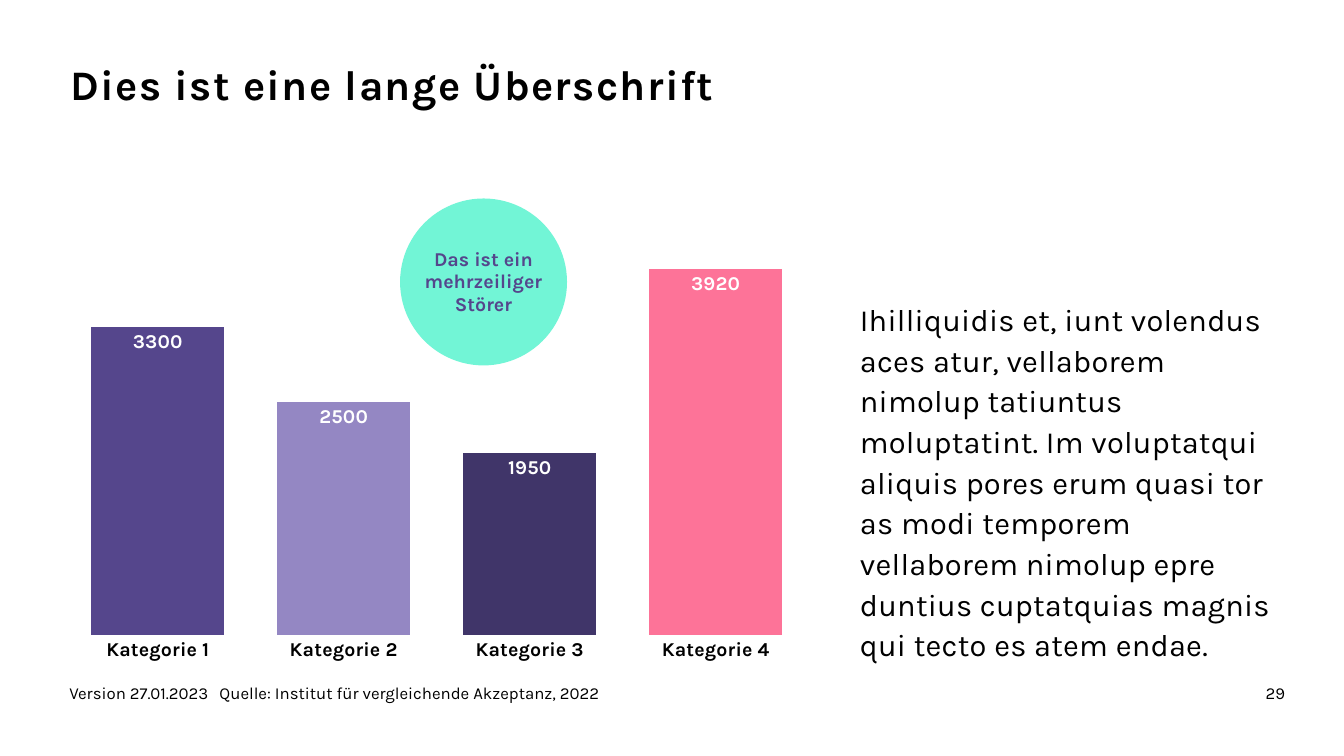
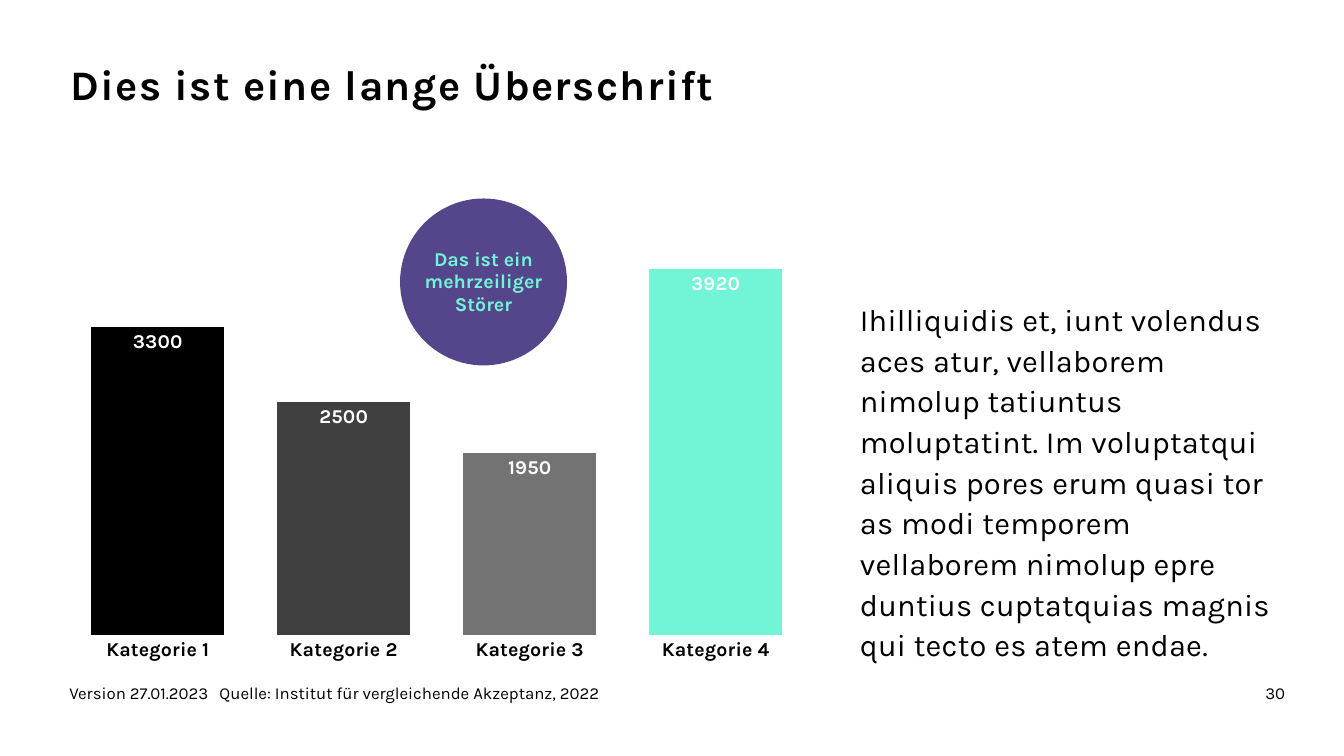
from dataclasses import dataclass

from lxml import etree
from pptx import Presentation
from pptx import util as u
from pptx.chart import data as cd
from pptx.dml import color
from pptx.enum import chart as ch, shapes, text
from pptx.oxml import ns

SCALE = 9525
FONT = "Karla"
BLACK, WHITE = "000000", "FFFFFF"
MINT, PLUM = "72F5D6", "55468C"

TITLE = "Dies ist eine lange Überschrift"
BODY = (
    "Ihilliquidis et, iunt volendus aces atur, vellaborem nimolup tatiuntus "
    "moluptatint. Im voluptatqui aliquis pores erum quasi tor as modi temporem "
    "vellaborem nimolup epre duntius cuptatquias magnis \vqui tecto es atem endae."
)
BADGE = "Das ist ein mehrzeiliger Störer"
SOURCE = "Version 27.01.2023\tQuelle: Institut für vergleichende Akzeptanz, 2022"
VALUES = {"Kategorie 1": 3300, "Kategorie 2": 2500, "Kategorie 3": 1950, "Kategorie 4": 3920}
LAYOUT = {"x": 0.02, "y": 0.12, "w": 0.96, "h": 0.8}
TOP = 4000


@dataclass(frozen=True)
class Box:
    left: int
    top: int
    width: int
    height: int

    def emu(self) -> list[int]:
        return [px(n) for n in (self.left, self.top, self.width, self.height)]


@dataclass(frozen=True)
class Style:
    size: int
    bold: bool = False
    align: text.PP_ALIGN = text.PP_ALIGN.LEFT
    lead: float = 1.0
    space: int = 0
    tab: int = 0


@dataclass(frozen=True)
class Page:
    number: int
    bars: tuple[str, ...]
    fill: str
    ink: str


CHART = Box(47, 196, 738, 444)
HEAD = Box(67, 63, 787, 108)
COPY = Box(819, 283, 404, 335)
DISC = Box(381, 189, 159, 159)
FOOT = Box(66, 650, 790, 38)
FOLIO = Box(1018, 650, 206, 38)

HEAD_STYLE = Style(30, bold=True, lead=0.85, space=100)
COPY_STYLE = Style(22, lead=1.1, space=20)
DISC_STYLE = Style(14, bold=True, align=text.PP_ALIGN.CENTER, lead=0.95)
FOOT_STYLE = Style(12, tab=143)
FOLIO_STYLE = Style(12, align=text.PP_ALIGN.RIGHT)

PAGES = (
    Page(29, (PLUM, "9487C3", "403569", "FD7398"), MINT, PLUM),
    Page(30, (BLACK, "404040", "737373", MINT), PLUM, MINT),
)


def px(count: int) -> int:
    return u.Emu(count * SCALE)


def rgb(code: str) -> color.RGBColor:
    return color.RGBColor.from_string(code)


def paint(fill, code: str) -> None:
    fill.solid()
    fill.fore_color.rgb = rgb(code)


def set_font(font, size: int, bold: bool, code: str) -> None:
    font.name = FONT
    font.size = u.Pt(size)
    font.bold = bold
    font.color.rgb = rgb(code)


def write(shape, words: str, style: Style, ink: str = BLACK) -> None:
    frame = shape.text_frame
    frame.word_wrap = True
    frame.margin_left = frame.margin_right = 0
    frame.margin_top = frame.margin_bottom = 0
    para = frame.paragraphs[0]
    para.text = words
    para.alignment = style.align
    para.line_spacing = style.lead
    if style.tab:
        tabs = etree.SubElement(para._p.get_or_add_pPr(), ns.qn("a:tabLst"))
        etree.SubElement(tabs, ns.qn("a:tab"), pos=str(px(style.tab)), algn="l")
    for run in para.runs:
        set_font(run.font, style.size, style.bold, ink)
        if style.space:
            run._r.get_or_add_rPr().set("spc", str(style.space))


def add_text(slide, box: Box, words: str, style: Style) -> None:
    write(slide.shapes.add_textbox(*box.emu()), words, style)


def add_badge(slide, page: Page) -> None:
    disc = slide.shapes.add_shape(shapes.MSO_SHAPE.OVAL, *DISC.emu())
    disc.shadow.inherit = False
    paint(disc.fill, page.fill)
    disc.line.fill.background()
    disc.text_frame.vertical_anchor = text.MSO_ANCHOR.MIDDLE
    write(disc, BADGE, DISC_STYLE, page.ink)


def fix_plot(chart) -> None:
    area = chart._chartSpace.chart.plotArea
    for old in area.findall(ns.qn("c:layout")):
        area.remove(old)
    layout = etree.Element(ns.qn("c:layout"))
    manual = etree.SubElement(layout, ns.qn("c:manualLayout"))
    parts = {"layoutTarget": "inner", "xMode": "edge", "yMode": "edge", **LAYOUT}
    for name, value in parts.items():
        etree.SubElement(manual, ns.qn(f"c:{name}"), val=str(value))
    area.insert(0, layout)


def add_bars(slide, page: Page) -> None:
    data = cd.CategoryChartData()
    data.categories = list(VALUES)
    data.add_series("Series 1", list(VALUES.values()))
    kind = ch.XL_CHART_TYPE.COLUMN_CLUSTERED
    chart = slide.shapes.add_chart(kind, *CHART.emu(), data).chart
    chart.has_legend = False
    chart.has_title = False
    set_font(chart.font, 10, False, BLACK)
    fix_plot(chart)

    axis = chart.category_axis
    axis.major_tick_mark = ch.XL_TICK_MARK.NONE
    axis.format.line.fill.background()
    set_font(axis.tick_labels.font, 14, True, BLACK)

    scale = chart.value_axis
    scale.minimum_scale = 0
    scale.maximum_scale = TOP
    scale.has_major_gridlines = False
    scale.visible = False

    plot = chart.plots[0]
    plot.gap_width = 40
    plot.overlap = 100
    plot.vary_by_categories = False
    series = plot.series[0]
    paint(series.format.fill, BLACK)
    for spot, code in enumerate(page.bars):
        paint(series.points[spot].format.fill, code)
    labels = series.data_labels
    labels.show_value = True
    labels.position = ch.XL_LABEL_POSITION.INSIDE_END
    set_font(labels.font, 14, True, WHITE)


def add_page(deck, page: Page) -> None:
    slide = deck.slides.add_slide(deck.slide_layouts[6])
    paint(slide.background.fill, WHITE)
    add_bars(slide, page)
    add_text(slide, FOLIO, str(page.number), FOLIO_STYLE)
    add_text(slide, FOOT, SOURCE, FOOT_STYLE)
    add_text(slide, COPY, BODY, COPY_STYLE)
    add_badge(slide, page)
    add_text(slide, HEAD, TITLE, HEAD_STYLE)


def main() -> None:
    deck = Presentation()
    deck.slide_width = px(1280)
    deck.slide_height = px(720)
    for page in PAGES:
        add_page(deck, page)
    deck.save("out.pptx")


if __name__ == "__main__":
    main()
